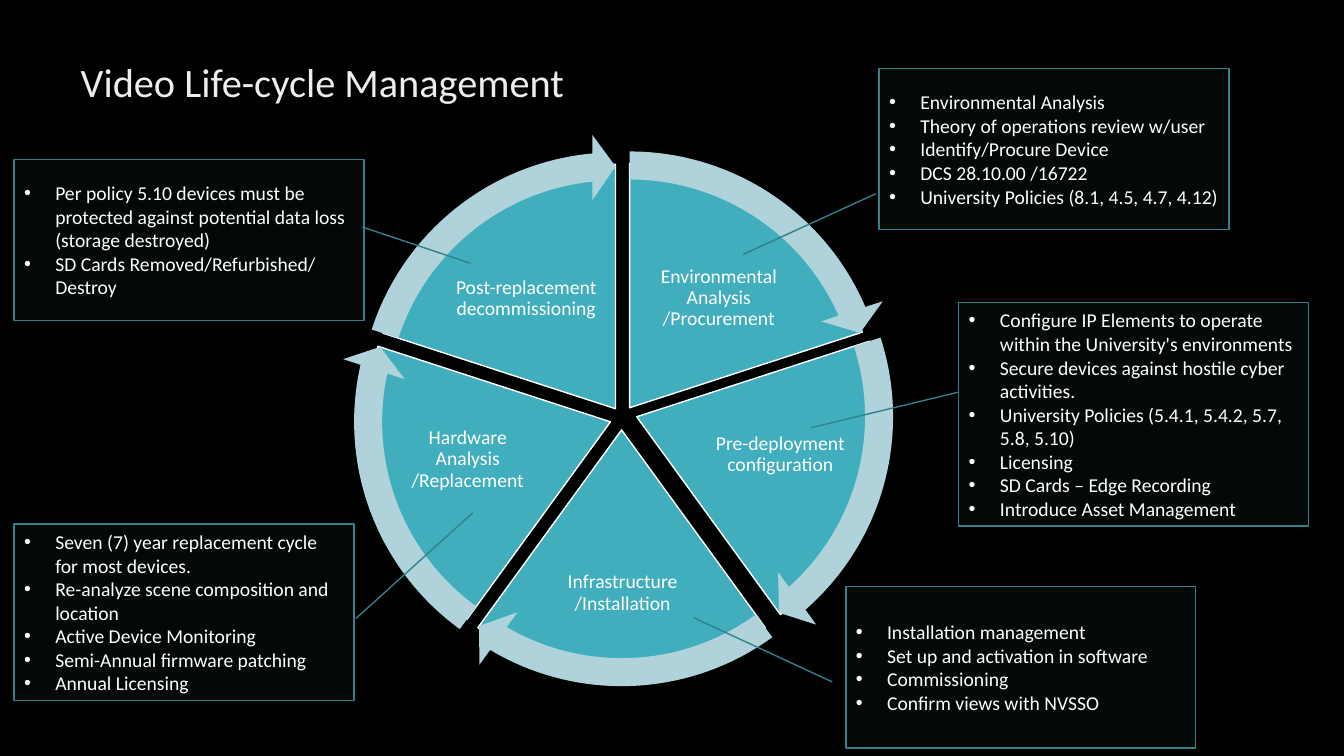
from dataclasses import dataclass

from lxml import etree
from pptx import Presentation
from pptx.dml.color import RGBColor
from pptx.enum import shapes, text
from pptx.oxml import ns
from pptx.util import Inches, Pt


@dataclass(frozen=True)
class Theme:
    background: RGBColor = RGBColor.from_string("000000")
    title: RGBColor = RGBColor.from_string("EDEDED")
    text: RGBColor = RGBColor.from_string("FFFFFF")
    wedge: RGBColor = RGBColor.from_string("41AEBD")
    arrow: RGBColor = RGBColor.from_string("B0D3DB")
    border: RGBColor = RGBColor.from_string("30818C")
    font: str = "Calibri"
    title_size: Pt = Pt(28.8)
    body_size: Pt = Pt(14)


theme = Theme()


def add_filled_shape(parent, kind, box, adjustments, fill, line=None):
    shape = parent.add_shape(kind, *map(Inches, box))
    shape.shadow.inherit = False
    for index, value in enumerate(adjustments):
        shape.adjustments[index] = value
    shape.fill.solid()
    shape.fill.fore_color.rgb = fill
    if line is None:
        shape.line.fill.background()
    else:
        shape.line.color.rgb = line
        shape.line.width = Pt(1)
    return shape


def set_font(paragraph, size, color):
    paragraph.font.name = theme.font
    paragraph.font.size = size
    paragraph.font.color.rgb = color


presentation = Presentation()
presentation.slide_width = Inches(13.33)
presentation.slide_height = Inches(7.5)
slide = presentation.slides.add_slide(presentation.slide_layouts[5])
slide.background.fill.solid()
slide.background.fill.fore_color.rgb = theme.background

# Title
title = slide.shapes.title
title.left, title.top, title.width, title.height = map(Inches, (0.7, 0.55, 10.29, 1.03))
title.text_frame.text = "Video Life-cycle Management"
title.text_frame.auto_size = text.MSO_AUTO_SIZE.NONE
title.text_frame.vertical_anchor = text.MSO_ANCHOR.TOP
title.text_frame.margin_top = Inches(0.07)
title_paragraph = title.text_frame.paragraphs[0]
title_paragraph.alignment = text.PP_ALIGN.LEFT
title_paragraph.line_spacing = 0.9
set_font(title_paragraph, theme.title_size, theme.title)

# Cycle stages, clockwise from the top: wedge corner, label box, label
stages = [
    ((3.82, 1.62), (6.35, 2.44, 1.56, 1.04), "Environmental Analysis /Procurement"),
    ((3.89, 1.71), (7.02, 3.93, 1.44, 1.16), "Pre-deployment configuration"),
    ((3.74, 1.84), (5.48, 5.25, 1.39, 1.27), "Infrastructure /Installation"),
    ((3.63, 1.76), (3.92, 3.98, 1.44, 1.16), "Hardware Analysis /Replacement"),
    ((3.68, 1.63), (4.44, 2.44, 1.56, 1.04), "Post-replacement decommissioning"),
]
# Angles are in units of 100000/60000 degrees: a full turn is 216
FULL_TURN = 216
TOP = 162
STEP = FULL_TURN / len(stages)
ARROW_SWEEP = 39.93
WEDGE_SIZE, ARROW_SIZE = 4.85, 5.45
cycle = slide.shapes.add_group_shape().shapes

# Wedges and their labels
for index, ((left, top), label_box, label) in enumerate(stages):
    start = (TOP + index * STEP) % FULL_TURN
    end = (start + STEP) % FULL_TURN
    add_filled_shape(cycle, shapes.MSO_SHAPE.PIE, (left, top, WEDGE_SIZE, WEDGE_SIZE),
                     (start, end), theme.wedge, theme.text)
    frame = cycle.add_textbox(*map(Inches, label_box)).text_frame
    frame.word_wrap = True
    frame.vertical_anchor = text.MSO_ANCHOR.MIDDLE
    frame.margin_left = frame.margin_right = Inches(0.02)
    frame.margin_top = frame.margin_bottom = Inches(0.02)
    paragraph = frame.paragraphs[0]
    paragraph.text = label
    paragraph.alignment = text.PP_ALIGN.CENTER
    paragraph.line_spacing = 0.9
    set_font(paragraph, theme.body_size, theme.text)

# Arrows around the wedges
for index, ((left, top), _, _) in enumerate(stages):
    start = (TOP + index * STEP) % FULL_TURN
    end = (start + ARROW_SWEEP) % FULL_TURN
    add_filled_shape(cycle, shapes.MSO_SHAPE.CIRCULAR_ARROW,
                     (left - 0.3, top - 0.3, ARROW_SIZE, ARROW_SIZE),
                     (0.051, 3.275, end, start, 0.059), theme.arrow)

# Callouts: box, leader line ends (y, x, y, x as shares of the box), bullets
callouts = [
    ((8.72, 0.68, 3.47, 1.6), (0.777, -0.01, 1.153, -0.389), [
        "Environmental Analysis",
        "Theory of operations review w/user",
        "Identify/Procure Device",
        "DCS 28.10.00 /16722",
        "University Policies (8.1, 4.5, 4.7, 4.12)",
    ]),
    ((8.39, 5.82, 3.47, 1.6), (0.591, -0.039, 0.193, -0.435), [
        "Installation management",
        "Set up and activation in software",
        "Commissioning",
        "Confirm views with NVSSO",
    ]),
    ((0.14, 5.2, 3.37, 1.75), (-0.065, 1.35, 0.535, 1.006), [
        "Seven (7) year replacement cycle for most devices.",
        "Re-analyze scene composition and location",
        "Active Device Monitoring",
        "Semi-Annual firmware patching",
        "Annual Licensing",
    ]),
    ((9.51, 3, 3.47, 2.22), (0.402, -0.003, 0.56, -0.422), [
        "Configure IP Elements to operate within the University's environments",
        "Secure devices against hostile cyber activities.",
        "University Policies (5.4.1, 5.4.2, 5.7, 5.8, 5.10)",
        "Licensing",
        "SD Cards – Edge Recording",
        "Introduce Asset Management",
    ]),
    ((0.14, 1.58, 3.47, 1.6), (0.645, 1.304, 0.421, 0.996), [
        "Per policy 5.10 devices must be protected against potential data loss "
        "(storage destroyed)",
        "SD Cards Removed/Refurbished/ Destroy",
    ]),
]
for box, leader, bullets in callouts:
    callout = add_filled_shape(slide.shapes, shapes.MSO_SHAPE.LINE_CALLOUT_1, box,
                               leader, theme.wedge, theme.border)
    # Fill at 5% opacity
    fill_color = callout.fill._xPr.find(ns.qn("a:solidFill"))[0]
    etree.SubElement(fill_color, ns.qn("a:alpha"), val="5000")
    frame = callout.text_frame
    frame.word_wrap = True
    frame.vertical_anchor = text.MSO_ANCHOR.MIDDLE
    for index, bullet in enumerate(bullets):
        paragraph = frame.paragraphs[0] if index == 0 else frame.add_paragraph()
        paragraph.text = bullet
        paragraph.alignment = text.PP_ALIGN.LEFT
        properties = paragraph._p.get_or_add_pPr()
        properties.set("marL", str(Inches(0.31)))
        properties.set("indent", str(Inches(-0.31)))
        etree.SubElement(properties, ns.qn("a:buFont"), typeface="Arial")
        etree.SubElement(properties, ns.qn("a:buChar"), char="•")
        set_font(paragraph, theme.body_size, theme.text)

presentation.save("out.pptx")
